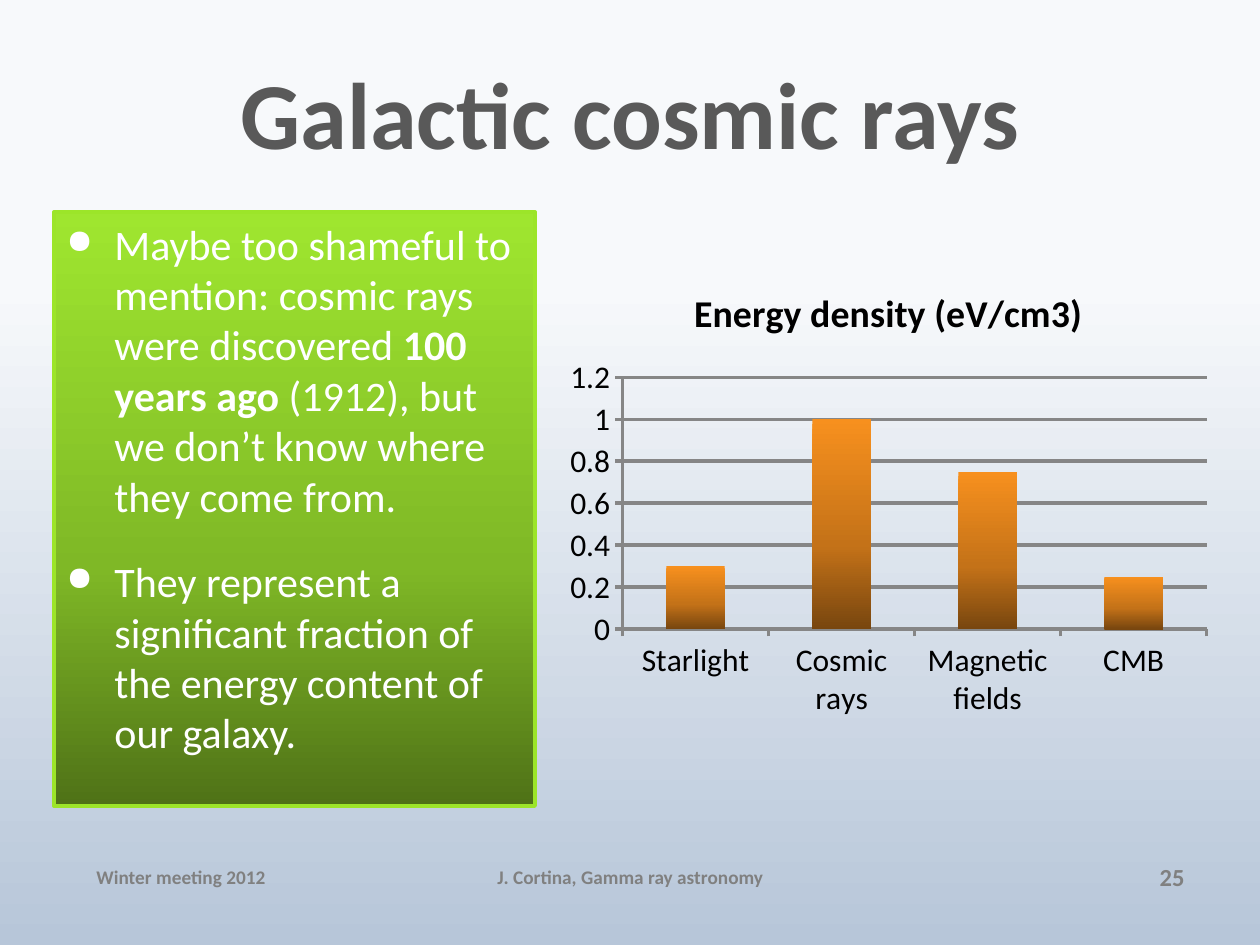
from lxml import etree
from pptx import Presentation
from pptx.chart.data import CategoryChartData
from pptx.dml.color import RGBColor
from pptx.enum.chart import XL_CHART_TYPE, XL_TICK_MARK
from pptx.enum.shapes import MSO_SHAPE
from pptx.enum.text import MSO_ANCHOR, PP_ALIGN
from pptx.oxml.ns import qn
from pptx.util import Pt

FONT = "Calibri"
WHITE = RGBColor(0xFF, 0xFF, 0xFF)
BLACK = RGBColor(0, 0, 0)
DARK = RGBColor(0x59, 0x59, 0x59)
GREY = RGBColor(0x80, 0x80, 0x80)
AXIS = RGBColor(0x86, 0x86, 0x86)
LIME = RGBColor(0x9C, 0xE5, 0x29)
SKY = [(30, RGBColor(0xF7, 0xF9, 0xFB)), (100, RGBColor(0xB7, 0xC6, 0xD9))]
GREEN = [(0, RGBColor(0x9F, 0xE6, 0x2F)), (60, RGBColor(0x7F, 0xB8, 0x26)),
         (100, RGBColor(0x4F, 0x72, 0x17))]
ORANGE = [(0, RGBColor(0xF7, 0x90, 0x1E)), (60, RGBColor(0xC4, 0x72, 0x18)),
          (100, RGBColor(0x78, 0x46, 0x0F))]


def px(*values):
    return [round(v * 914400 / 126) for v in values]


def set_gradient(fill, root, stops):
    fill.gradient()
    fill.gradient_angle = 270
    gs_list = next(root.iter(qn("a:gsLst")))
    for gs in list(gs_list):
        gs_list.remove(gs)
    for pos, color in stops:
        gs = etree.SubElement(gs_list, qn("a:gs"), pos=str(pos * 1000))
        etree.SubElement(gs, qn("a:srgbClr"), val=str(color))


prs = Presentation()
prs.slide_width, prs.slide_height = px(1260, 945)
s = prs.slides.add_slide(prs.slide_layouts[6])
set_gradient(s.background.fill, s.element, SKY)

labels = [
    ("Galactic cosmic rays", (126, 32, 1008, 174), 54, DARK, PP_ALIGN.CENTER),
    ("Winter meeting 2012", (84, 858, 294, 38), 11, GREY, PP_ALIGN.LEFT),
    ("J. Cortina, Gamma ray astronomy", (431, 858, 399, 38), 11, GREY, PP_ALIGN.CENTER),
    ("25", (903, 858, 294, 38), 14, GREY, PP_ALIGN.RIGHT),
]
for text, box, size, color, align in labels:
    tf = s.shapes.add_textbox(*px(*box)).text_frame
    tf.word_wrap = True
    tf.vertical_anchor = MSO_ANCHOR.MIDDLE
    p = tf.paragraphs[0]
    p.text = text
    p.alignment = align
    if size == 54:
        p.line_spacing = Pt(56)
    font = p.runs[0].font
    font.name, font.size, font.bold = FONT, Pt(size), True
    font.color.rgb = color

sp = s.shapes.add_shape(MSO_SHAPE.RECTANGLE, *px(54, 212, 481, 594))
sp.shadow.inherit = False
set_gradient(sp.fill, sp.element, GREEN)
sp.line.color.rgb = LIME
sp.line.width = Pt(2.25)
tf = sp.text_frame
tf.word_wrap = True
tf.vertical_anchor = MSO_ANCHOR.TOP

bullets = [
    [("Maybe too shameful to mention: cosmic rays were discovered ", False),
     ("100 years ago ", True),
     ("(1912), but we don’t know where they come from.", False)],
    [("They represent a significant fraction of the energy content of our galaxy.", False)],
]
indent = px(48)[0]
for i, parts in enumerate(bullets):
    p = tf.add_paragraph() if i else tf.paragraphs[0]
    p.alignment = PP_ALIGN.LEFT
    p.space_before = Pt(20)
    pPr = p._p.get_or_add_pPr()
    pPr.set("marL", str(indent))
    pPr.set("indent", str(-indent))
    etree.SubElement(pPr, qn("a:buSzPct"), val="80000")
    etree.SubElement(pPr, qn("a:buChar"), char="●")
    for text, bold in parts:
        r = p.add_run()
        r.text = text
        r.font.name, r.font.size, r.font.bold = FONT, Pt(24), bold
        r.font.color.rgb = WHITE

data = CategoryChartData()
data.categories = ["Starlight", "Cosmic rays", "Magnetic fields", "CMB"]
data.add_series("Energy density (eV/cm3)", (0.3, 1, 0.75, 0.25))
chart = s.shapes.add_chart(
    XL_CHART_TYPE.COLUMN_STACKED, *px(557, 263, 663, 464), data).chart
chart.font.name, chart.font.size = FONT, Pt(18)
chart.font.color.rgb = BLACK
chart.has_legend = False
chart.has_title = True
p = chart.chart_title.text_frame.paragraphs[0]
p.text = "Energy density (eV/cm3)"
font = p.runs[0].font
font.name, font.size, font.bold = FONT, Pt(21.6), True
font.color.rgb = BLACK

plot = chart.plots[0]
plot.gap_width = 150
plot.overlap = 100
plot.vary_by_categories = False
series = plot.series[0]
set_gradient(series.format.fill, series._element, ORANGE)

value_axis = chart.value_axis
value_axis.minimum_scale, value_axis.maximum_scale = 0, 1.2
value_axis.major_unit = 0.2
value_axis.has_major_gridlines = True
for axis in (chart.category_axis, value_axis):
    axis.major_tick_mark = XL_TICK_MARK.OUTSIDE
for item in (chart.category_axis, value_axis, value_axis.major_gridlines):
    item.format.line.color.rgb = AXIS
    item.format.line.width = Pt(2)

prs.save("out.pptx")
